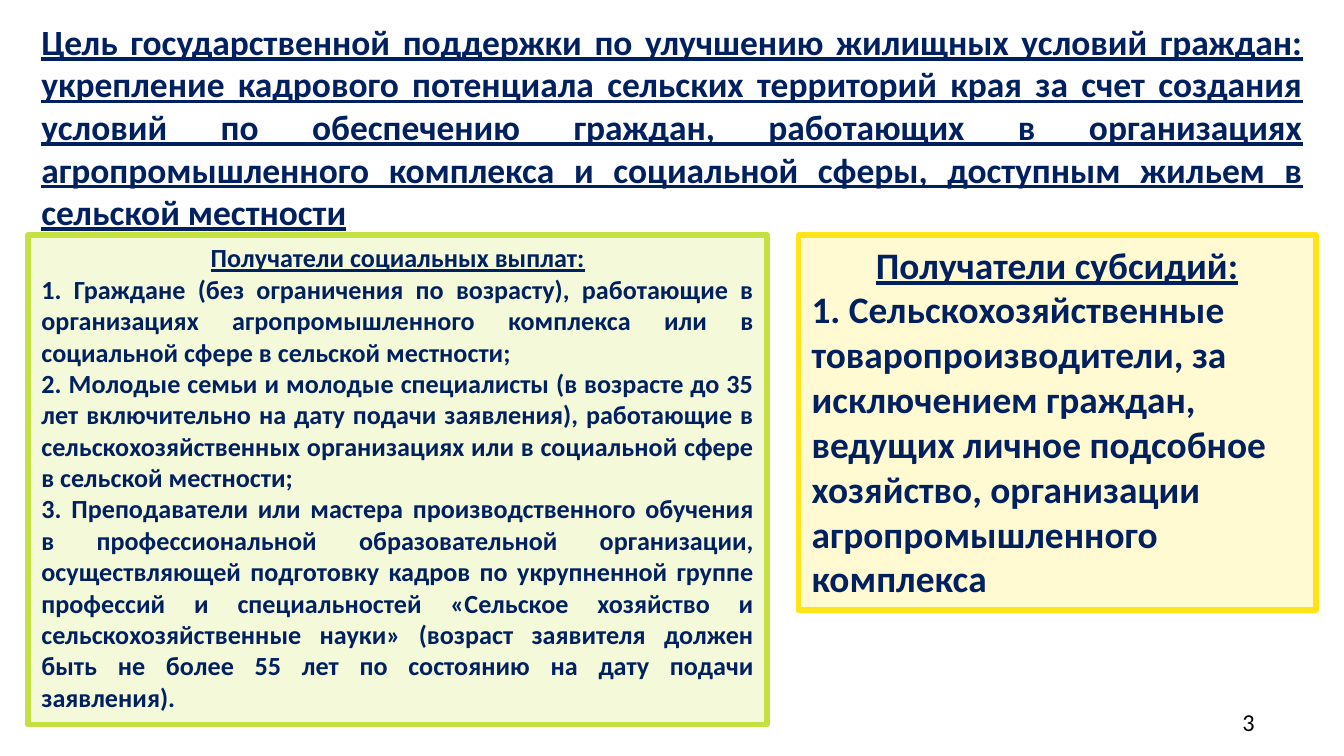
from pptx import Presentation
from pptx.dml.color import RGBColor
from pptx.enum.shapes import MSO_SHAPE
from pptx.enum.text import MSO_ANCHOR, PP_ALIGN
from pptx.util import Inches, Pt

LEFT, CENTER, JUSTIFY = PP_ALIGN.LEFT, PP_ALIGN.CENTER, PP_ALIGN.JUSTIFY
NAVY = RGBColor(0x00, 0x20, 0x60)
BLACK = RGBColor(0x00, 0x00, 0x00)
PALE_GREEN = RGBColor(0xF3, 0xF9, 0xD9)
GREEN = RGBColor(0xC5, 0xE0, 0x41)
PALE_YELLOW = RGBColor(0xFF, 0xFA, 0xD1)
YELLOW = RGBColor(0xFE, 0xE4, 0x19)

GOAL = (
    "Цель государственной поддержки по улучшению жилищных условий граждан: "
    "укрепление кадрового потенциала сельских территорий края за счет создания "
    "условий по обеспечению граждан, работающих в организациях "
    "агропромышленного комплекса и социальной сферы, доступным жильем "
    "в сельской местности"
)
PANELS = [
    {
        "heading": "Получатели социальных выплат:",
        "items": [
            "1. Граждане (без ограничения по возрасту), работающие в организациях "
            "агропромышленного комплекса или в социальной сфере в сельской местности;",
            "2. Молодые семьи и молодые специалисты (в возрасте до 35 лет включительно "
            "на дату подачи заявления), работающие в сельскохозяйственных организациях "
            "или в социальной сфере в сельской местности;",
            "3. Преподаватели или мастера производственного обучения в профессиональной "
            "образовательной организации, осуществляющей подготовку кадров по укрупненной "
            "группе профессий и специальностей «Сельское хозяйство и "
            "сельскохозяйственные науки» (возраст заявителя должен быть не более 55 лет "
            "по состоянию на дату подачи заявления).",
        ],
        "width": 5.5, "height": 3.64, "size": 14, "align": JUSTIFY,
        "fill": PALE_GREEN, "line": GREEN,
    },
    {
        "heading": "Получатели субсидий:",
        "items": [
            "1. Сельскохозяйственные товаропроизводители, за исключением граждан, "
            "ведущих личное подсобное хозяйство, организации "
            "агропромышленного комплекса",
        ],
        "width": 3.85, "height": 2.79, "size": 20, "align": LEFT,
        "fill": PALE_YELLOW, "line": YELLOW,
    },
]
PAGE_NUMBER = "3"

SLIDE_WIDTH = 10
MARGIN = 0.21
PANEL_TOP = 1.75
PANEL_GAP = 0.23


def write(paragraph, text, size, align, color=NAVY, bold=True, underline=False):
    paragraph.text = text
    paragraph.alignment = align
    font = paragraph.font
    font.name = "Calibri"
    font.size = Pt(size)
    font.bold = bold
    font.underline = underline
    font.color.rgb = color


def add_text(slide, left, top, width, height):
    """Add a wrapping text box and return its first paragraph."""
    box = slide.shapes.add_textbox(
        Inches(left), Inches(top), Inches(width), Inches(height))
    box.text_frame.word_wrap = True
    return box.text_frame.paragraphs[0]


def add_panel(slide, left, panel):
    shape = slide.shapes.add_shape(
        MSO_SHAPE.RECTANGLE, Inches(left), Inches(PANEL_TOP),
        Inches(panel["width"]), Inches(panel["height"]))
    shape.shadow.inherit = False
    shape.fill.solid()
    shape.fill.fore_color.rgb = panel["fill"]
    shape.line.color.rgb = panel["line"]
    shape.line.width = Pt(3)
    frame = shape.text_frame
    frame.word_wrap = True
    frame.vertical_anchor = MSO_ANCHOR.TOP
    write(frame.paragraphs[0], panel["heading"], panel["size"], CENTER, underline=True)
    for item in panel["items"]:
        write(frame.add_paragraph(), item, panel["size"], panel["align"])


prs = Presentation()
prs.slide_width = Inches(SLIDE_WIDTH)
prs.slide_height = Inches(SLIDE_WIDTH * 9 / 16)
slide = prs.slides.add_slide(prs.slide_layouts[6])

goal = add_text(slide, MARGIN, 0.1, SLIDE_WIDTH - 2 * MARGIN, 1.7)
write(goal, GOAL, 19, JUSTIFY, underline=True)

left = MARGIN
for panel in PANELS:
    add_panel(slide, left, panel)
    left += panel["width"] + PANEL_GAP

number = add_text(slide, 9.08, 5.21, 0.42, 0.3)
write(number, PAGE_NUMBER, 13, CENTER, color=BLACK, bold=False)

prs.save("out.pptx")
